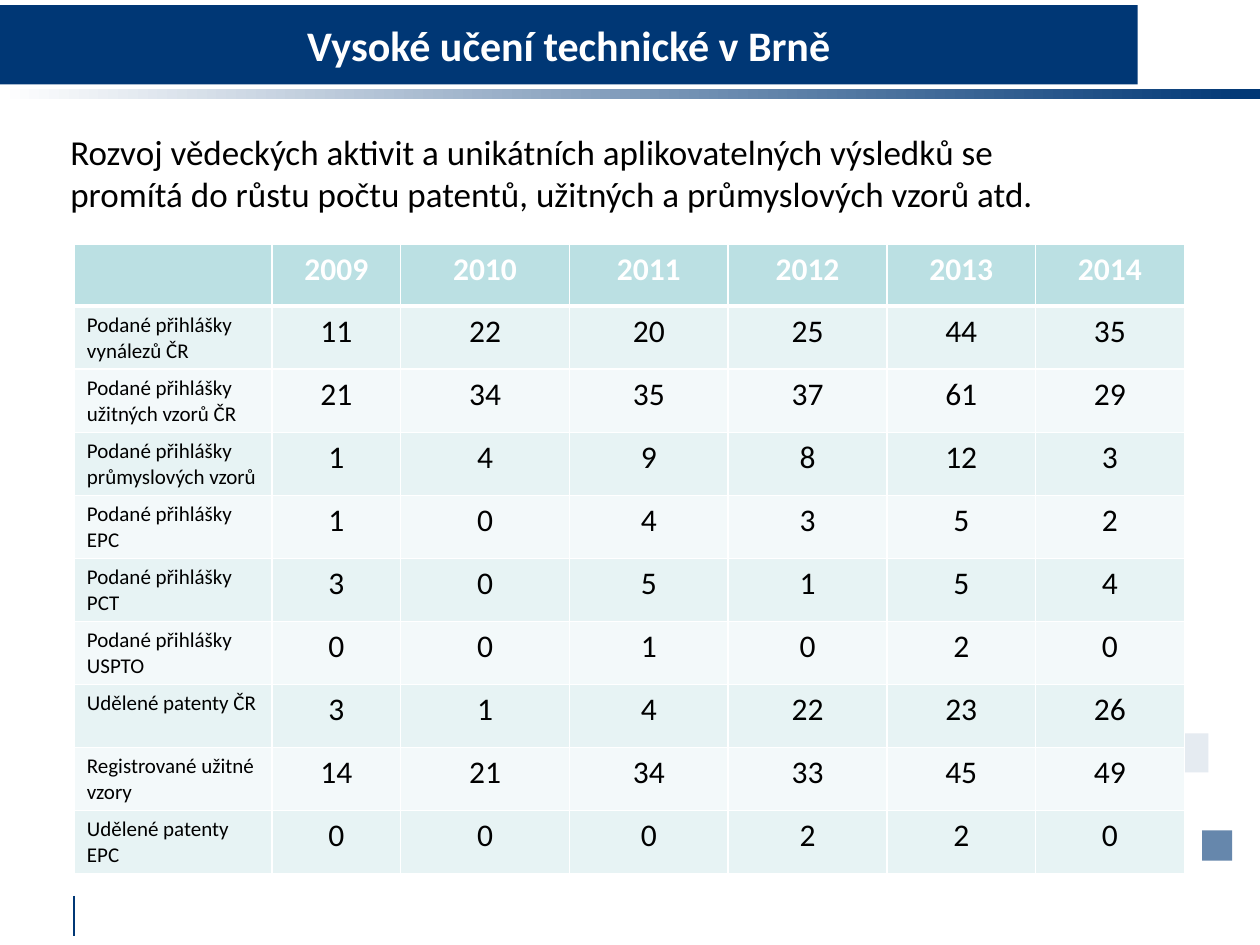
from lxml import etree
from pptx import Presentation
from pptx.dml.color import RGBColor
from pptx.enum.shapes import MSO_CONNECTOR, MSO_SHAPE
from pptx.enum.text import MSO_ANCHOR, PP_ALIGN
from pptx.oxml.ns import qn
from pptx.util import Inches, Pt

RECT = MSO_SHAPE.RECTANGLE
STRAIGHT = MSO_CONNECTOR.STRAIGHT
MIDDLE = MSO_ANCHOR.MIDDLE
LEFT, CENTER = PP_ALIGN.LEFT, PP_ALIGN.CENTER

FONT = "Calibri"
NAVY = RGBColor(0x00, 0x37, 0x75)
WHITE = RGBColor(0xFF, 0xFF, 0xFF)
BLACK = RGBColor(0x00, 0x00, 0x00)
HEADER_FILL = RGBColor(0xBB, 0xE0, 0xE3)
BAND_FILLS = (RGBColor(0xE7, 0xF3, 0xF4), RGBColor(0xF3, 0xF9, 0xFA))

# Content
TITLE = "Vysoké učení technické v Brně"
INTRO = ("Rozvoj vědeckých aktivit a unikátních aplikovatelných výsledků se promítá "
         "do růstu počtu patentů, užitných a průmyslových vzorů atd.")
ROWS = [
    ("", 2009, 2010, 2011, 2012, 2013, 2014),
    ("Podané přihlášky vynálezů ČR", 11, 22, 20, 25, 44, 35),
    ("Podané přihlášky užitných vzorů ČR", 21, 34, 35, 37, 61, 29),
    ("Podané přihlášky průmyslových vzorů", 1, 4, 9, 8, 12, 3),
    ("Podané přihlášky EPC", 1, 0, 4, 3, 5, 2),
    ("Podané přihlášky PCT", 3, 0, 5, 1, 5, 4),
    ("Podané přihlášky USPTO", 0, 0, 1, 0, 2, 0),
    ("Udělené patenty ČR", 3, 1, 4, 22, 23, 26),
    ("Registrované užitné vzory", 14, 21, 34, 33, 45, 49),
    ("Udělené patenty EPC", 0, 0, 0, 2, 2, 0),
]
COL_WIDTHS = (1.57, 1.02, 1.34, 1.26, 1.26, 1.18, 1.18)
HEADER_HEIGHT, ROW_HEIGHT = 0.49, 0.5
# Decorative squares: left, top, side, fill
SQUARES = [
    (9.54, 6.59, 0.24, RGBColor(0x66, 0x87, 0xAC)),
    (9.28, 5.82, 0.31, RGBColor(0xE5, 0xEB, 0xF1)),
]


def add_rect(slide, x, y, w, h):
    sp = slide.shapes.add_shape(RECT, Inches(x), Inches(y), Inches(w), Inches(h))
    sp.shadow.inherit = False
    sp.line.fill.background()
    return sp


def add_text(p, text, size, color, bold=False, align=LEFT):
    p.alignment = align
    r = p.add_run()
    r.text = text
    r.font.name = FONT
    r.font.size = Pt(size)
    r.font.bold = bold
    r.font.color.rgb = color


def set_borders(cell, widths):
    tcPr = cell._tc.get_or_add_tcPr()
    for side, width in widths.items():
        ln = etree.SubElement(tcPr, qn(f"a:ln{side}"), w=str(Pt(width)))
        fill = etree.SubElement(ln, qn("a:solidFill"))
        etree.SubElement(fill, qn("a:srgbClr"), val=str(WHITE))


def fill_cell(cell, row, col, value):
    header = row == 0
    # Borders precede the fill in the cell properties
    set_borders(cell, {"L": 1, "R": 1, "T": 3 if row == 1 else 1, "B": 3 if header else 1})
    cell.fill.solid()
    cell.fill.fore_color.rgb = HEADER_FILL if header else BAND_FILLS[(row - 1) % 2]
    if value != "":
        add_text(cell.text_frame.paragraphs[0], str(value),
                 size=18 if col else 12,
                 color=WHITE if header else BLACK,
                 bold=header,
                 align=CENTER if col else LEFT)


def main():
    prs = Presentation()
    prs.slide_width, prs.slide_height = Inches(10), Inches(7.5)
    slide = prs.slides.add_slide(prs.slide_layouts[5])

    # Decoration
    for x, y, side, color in SQUARES:
        sp = add_rect(slide, x, y, side, side)
        sp.fill.solid()
        sp.fill.fore_color.rgb = color

    rule = slide.shapes.add_connector(
        STRAIGHT, Inches(0.59), Inches(7.11), Inches(0.59), Inches(7.43))
    rule.line.color.rgb = NAVY
    rule.line.width = Pt(1)
    etree.SubElement(rule._element.spPr, qn("a:effectLst"))

    strip = add_rect(slide, 0, 0.71, 10, 0.08)
    strip.fill.gradient()
    strip.fill.gradient_angle = 0
    for stop, color in zip(strip.fill.gradient_stops, (WHITE, NAVY)):
        stop.color.rgb = color

    # Title bar
    title = slide.shapes.title
    title.left, title.top = Inches(0), Inches(0.04)
    title.width, title.height = Inches(9.03), Inches(0.63)
    title.fill.solid()
    title.fill.fore_color.rgb = NAVY
    tf = title.text_frame
    tf.vertical_anchor = MIDDLE
    tf.margin_left = tf.margin_right = Inches(0.12)
    tf.margin_top = tf.margin_bottom = Inches(0.08)
    add_text(tf.paragraphs[0], TITLE, 24, WHITE, bold=True, align=CENTER)

    # Introduction
    intro = slide.shapes.add_textbox(Inches(0.46), Inches(0.99), Inches(8.48), Inches(0.77))
    intro.text_frame.word_wrap = True
    add_text(intro.text_frame.paragraphs[0], INTRO, 20, BLACK)

    # Table
    height = HEADER_HEIGHT + ROW_HEIGHT * (len(ROWS) - 1)
    table = slide.shapes.add_table(
        len(ROWS), len(COL_WIDTHS), Inches(0.59), Inches(1.94),
        Inches(sum(COL_WIDTHS)), Inches(height)).table
    for column, width in zip(table.columns, COL_WIDTHS):
        column.width = Inches(width)
    for i, values in enumerate(ROWS):
        table.rows[i].height = Inches(ROW_HEIGHT if i else HEADER_HEIGHT)
        for j, value in enumerate(values):
            fill_cell(table.cell(i, j), i, j, value)

    prs.save("out.pptx")


if __name__ == "__main__":
    main()
